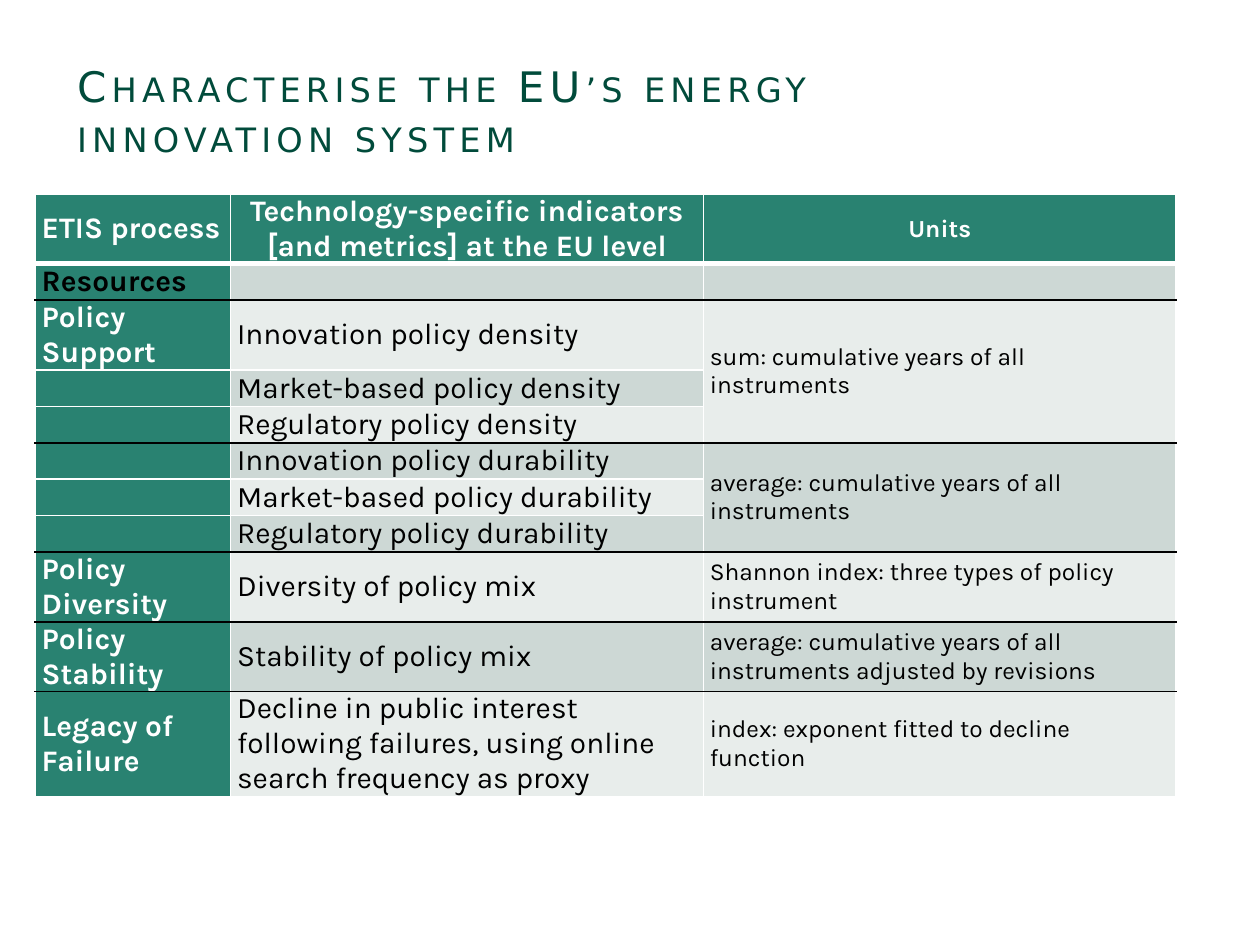
"""Build a slide with a table of policy indicators for the EU's energy innovation system."""
import pptx
import pptx.dml.color
import pptx.enum.text
import pptx.oxml
import pptx.oxml.ns
import pptx.util

Cm = pptx.util.Cm
Pt = pptx.util.Pt
RGBColor = pptx.dml.color.RGBColor
ALIGN = pptx.enum.text.PP_ALIGN
ANCHOR = pptx.enum.text.MSO_ANCHOR

DARK_GREEN = RGBColor(0x01, 0x4B, 0x3B)
GREEN = RGBColor(0x29, 0x82, 0x71)
BANDS = (RGBColor(0xE8, 0xED, 0xEB), RGBColor(0xCD, 0xD8, 0xD5))
WHITE = RGBColor(0xFF, 0xFF, 0xFF)
BLACK = RGBColor(0, 0, 0)

TITLE = "Characterise the EU’s energy innovation system"
ROWS = [
    ("ETIS process", "Technology-specific indicators [and metrics] at the EU level", "Units"),
    ("Resources", "", ""),
    ("Policy Support", "Innovation policy density", "sum: cumulative years of all instruments"),
    ("", "Market-based policy density", ""),
    ("", "Regulatory policy density", ""),
    ("", "Innovation policy durability", "average: cumulative years of all instruments"),
    ("", "Market-based policy durability", ""),
    ("", "Regulatory policy durability", ""),
    ("Policy Diversity", "Diversity of policy mix", "Shannon index: three types of policy instrument"),
    ("Policy Stability", "Stability of policy mix",
     "average: cumulative years of all instruments adjusted by revisions"),
    ("Legacy of Failure",
     "Decline in public interest following failures, using online search frequency as proxy",
     "index: exponent fitted to decline function"),
]
LINES_PER_ROW = (2, 1, 2, 1, 1, 1, 1, 1, 2, 2, 3)
LINE_HEIGHT = 0.7
COLUMN_WIDTHS = (3.94, 9.53, 9.53)
TEXT_SIZES = (17, 17, 14)
UNIT_SPANS = ((2, 4), (5, 7))
RULED_ROWS = (1, 4, 7, 8, 9)


def write(text_frame, text, font="Karla", size=17, color=BLACK, bold=False,
          align=ALIGN.LEFT, small_caps=False, spacing=0):
    paragraph = text_frame.paragraphs[0]
    paragraph.alignment = align
    if not text:
        paragraph._p.get_or_add_endParaRPr().set("sz", str(size * 100))
        return
    run = paragraph.add_run()
    run.text = text
    run.font.name = font
    run.font.size = Pt(size)
    run.font.bold = bold
    run.font.color.rgb = color
    properties = run._r.get_or_add_rPr()
    if small_caps:
        properties.set("cap", "small")
    if spacing:
        properties.set("spc", str(spacing * 100))


def border_below(row):
    if row == 0:
        return WHITE, 3
    return (BLACK if row in RULED_ROWS else WHITE), 1


def set_borders(cell, row):
    above = border_below(row - 1) if row else (WHITE, 1)
    sides = {"L": (WHITE, 1), "R": (WHITE, 1), "T": above, "B": border_below(row)}
    properties = cell._tc.get_or_add_tcPr()
    for position, (side, (color, width)) in enumerate(sides.items()):
        properties.insert(position, pptx.oxml.parse_xml(
            f'<a:ln{side} {pptx.oxml.ns.nsdecls("a")} w="{Pt(width)}">'
            f'<a:solidFill><a:srgbClr val="{color}"/></a:solidFill></a:ln{side}>'))


def format_cell(cell, row, column, text):
    header = row == 0
    label = header or column == 0
    cell.margin_left = cell.margin_right = Cm(0.13)
    cell.margin_top = cell.margin_bottom = 0
    cell.vertical_anchor = ANCHOR.MIDDLE
    cell.fill.solid()
    cell.fill.fore_color.rgb = GREEN if label else BANDS[row % 2]
    set_borders(cell, row)
    write(cell.text_frame, text, size=TEXT_SIZES[column], bold=label,
          color=WHITE if label and text != "Resources" else BLACK,
          align=ALIGN.CENTER if header and column else ALIGN.LEFT)


def add_title(slide):
    title = slide.shapes.title
    title.left, title.top, title.width, title.height = Cm(1.3), Cm(0.53), Cm(17.6), Cm(3.4)
    title.text_frame.word_wrap = True
    title.text_frame.auto_size = pptx.enum.text.MSO_AUTO_SIZE.NONE
    title.text_frame.vertical_anchor = ANCHOR.MIDDLE
    write(title.text_frame, TITLE, font="DejaVu Sans", size=24, color=DARK_GREEN,
          small_caps=True, spacing=3)


def add_indicator_table(slide):
    table = slide.shapes.add_table(
        len(ROWS), len(COLUMN_WIDTHS), Cm(0.71), Cm(3.91),
        Cm(sum(COLUMN_WIDTHS)), Cm(sum(LINES_PER_ROW) * LINE_HEIGHT)).table
    for column, width in zip(table.columns, COLUMN_WIDTHS):
        column.width = Cm(width)
    for row, lines in zip(table.rows, LINES_PER_ROW):
        row.height = Cm(lines * LINE_HEIGHT)
    for row, texts in enumerate(ROWS):
        for column, text in enumerate(texts):
            format_cell(table.cell(row, column), row, column, text)
    for first, last in UNIT_SPANS:
        table.cell(first, 2).merge(table.cell(last, 2))


def main():
    presentation = pptx.Presentation()
    presentation.slide_width, presentation.slide_height = Cm(25.4), Cm(19.05)
    slide = presentation.slides.add_slide(presentation.slide_layouts[5])
    add_title(slide)
    add_indicator_table(slide)
    presentation.save("out.pptx")


if __name__ == "__main__":
    main()
